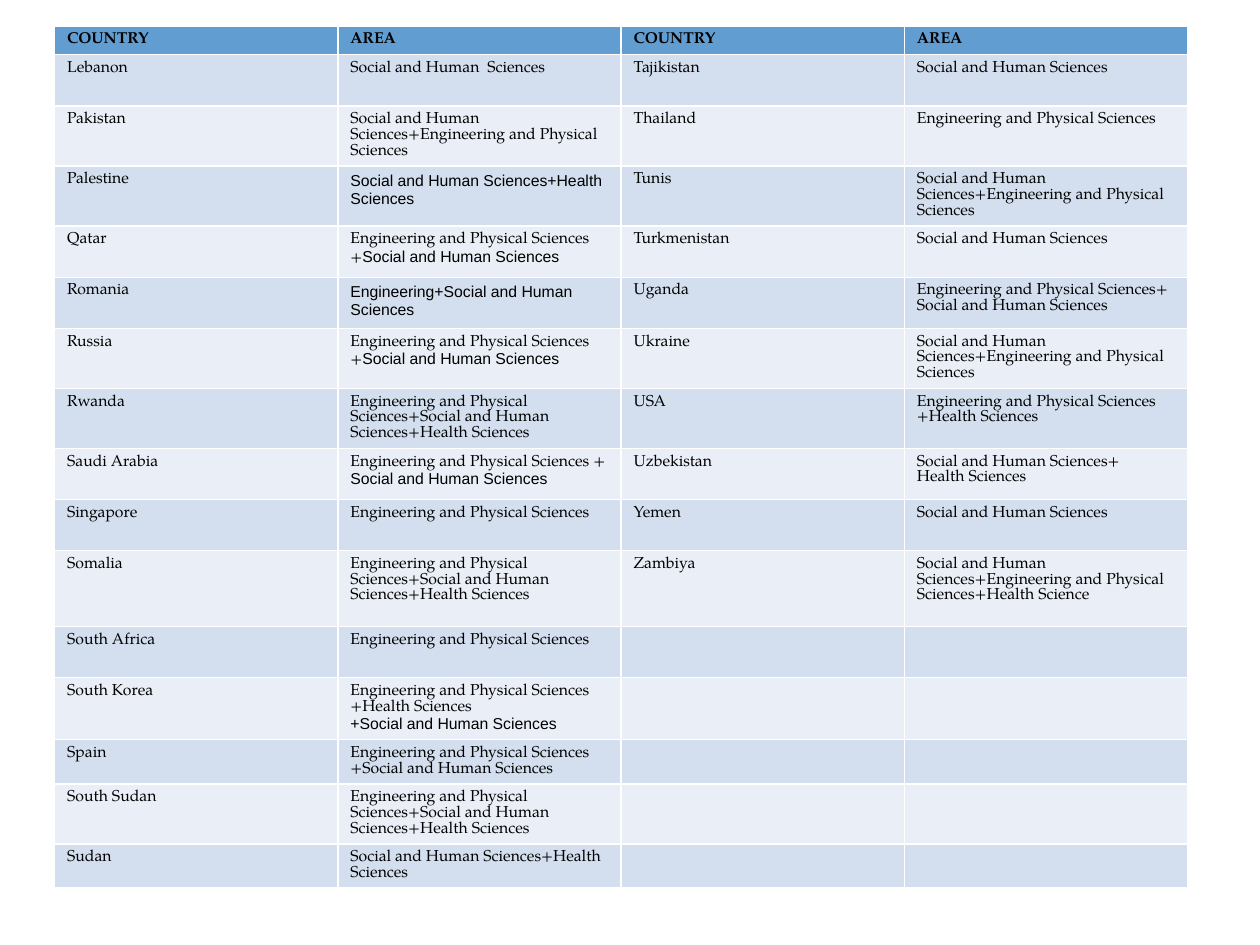
from itertools import zip_longest

from lxml.etree import SubElement
from pptx import Presentation
from pptx.dml.color import RGBColor
from pptx.oxml.ns import qn
from pptx.util import Cm, Pt

# In an area, "\n" starts a paragraph and the text after "|" is set in the second font.
HEADER = ("COUNTRY", "AREA")
LEFT_COUNTRIES = [
    ("Lebanon", "Social and Human  Sciences"),
    ("Pakistan", "Social and Human Sciences+Engineering and Physical Sciences"),
    ("Palestine", "|Social and Human Sciences+Health Sciences"),
    ("Qatar", "Engineering and Physical Sciences +|Social and Human Sciences"),
    ("Romania", "|Engineering+Social and Human Sciences"),
    ("Russia", "Engineering and Physical Sciences +|Social and Human Sciences"),
    ("Rwanda", "Engineering and Physical Sciences+Social and Human Sciences+Health Sciences"),
    ("Saudi Arabia", "Engineering and Physical Sciences + |Social and Human Sciences"),
    ("Singapore", "Engineering and Physical Sciences"),
    ("Somalia", "Engineering and Physical Sciences+Social and Human Sciences+Health Sciences"),
    ("South Africa", "Engineering and Physical Sciences"),
    ("South Korea", "Engineering and Physical Sciences +Health Sciences\n|+Social and Human Sciences"),
    ("Spain", "Engineering and Physical Sciences +Social and Human Sciences"),
    ("South Sudan", "Engineering and Physical Sciences+Social and Human Sciences+Health Sciences"),
    ("Sudan", "Social and Human Sciences+Health Sciences"),
]
RIGHT_COUNTRIES = [
    ("Tajikistan", "Social and Human Sciences"),
    ("Thailand", "Engineering and Physical Sciences"),
    ("Tunis", "Social and Human Sciences+Engineering and Physical Sciences"),
    ("Turkmenistan", "Social and Human Sciences"),
    ("Uganda", "Engineering and Physical Sciences+ Social and Human Sciences"),
    ("Ukraine", "Social and Human Sciences+Engineering and Physical Sciences"),
    ("USA", "Engineering and Physical Sciences +Health Sciences"),
    ("Uzbekistan", "Social and Human Sciences+\nHealth Sciences"),
    ("Yemen", "Social and Human Sciences"),
    ("Zambiya", "Social and Human Sciences+Engineering and Physical Sciences+Health Science"),
]
ROW_HEIGHTS = [0.58, 1.04, 1.21, 1.21, 1.03, 1.03, 1.21, 1.21,
               1.03, 1.03, 1.53, 1.03, 1.25, 0.89, 1.21, 0.87]
COLUMN_WIDTH = 5.71
COLORS = {"header": "629DD1", "odd": "D3DFEE", "even": "EAEFF7", "text": "000000"}
FONTS = ("TeX Gyre Pagella", "Arial")
TEXT_SIZE = Pt(9)


def fill_cell(cell, text, color, bold):
    cell.fill.solid()
    cell.fill.fore_color.rgb = RGBColor.from_string(color)
    frame = cell.text_frame
    for index, line in enumerate(text.split("\n")):
        paragraph = frame.add_paragraph() if index else frame.paragraphs[0]
        for font_name, part in zip(FONTS, line.split("|")):
            if part:
                run = paragraph.add_run()
                run.text = part
                style = {"name": font_name, "size": TEXT_SIZE, "bold": bold}
                for key, value in style.items():
                    setattr(run.font, key, value)
                run.font.color.rgb = RGBColor.from_string(COLORS["text"])
        # The end mark keeps an empty cell from stretching its row.
        SubElement(paragraph._p, qn("a:endParaRPr"), sz=str(TEXT_SIZE.centipoints))


def main():
    presentation = Presentation()
    presentation.slide_width, presentation.slide_height = Cm(25.4), Cm(19.05)
    slide = presentation.slides.add_slide(presentation.slide_layouts[6])

    rows = [HEADER * 2]
    rows += [left + right for left, right in
             zip_longest(LEFT_COUNTRIES, RIGHT_COUNTRIES, fillvalue=("", ""))]
    table = slide.shapes.add_table(
        len(rows), len(rows[0]), Cm(1.1), Cm(0.52),
        Cm(COLUMN_WIDTH * len(rows[0])), Cm(sum(ROW_HEIGHTS))).table
    for column in table.columns:
        column.width = Cm(COLUMN_WIDTH)

    for row_index, (texts, height) in enumerate(zip(rows, ROW_HEIGHTS)):
        table.rows[row_index].height = Cm(height)
        is_header = row_index == 0
        band = "header" if is_header else "odd" if row_index % 2 else "even"
        for column_index, text in enumerate(texts):
            fill_cell(table.cell(row_index, column_index), text, COLORS[band], is_header)

    presentation.save("out.pptx")


if __name__ == "__main__":
    main()
